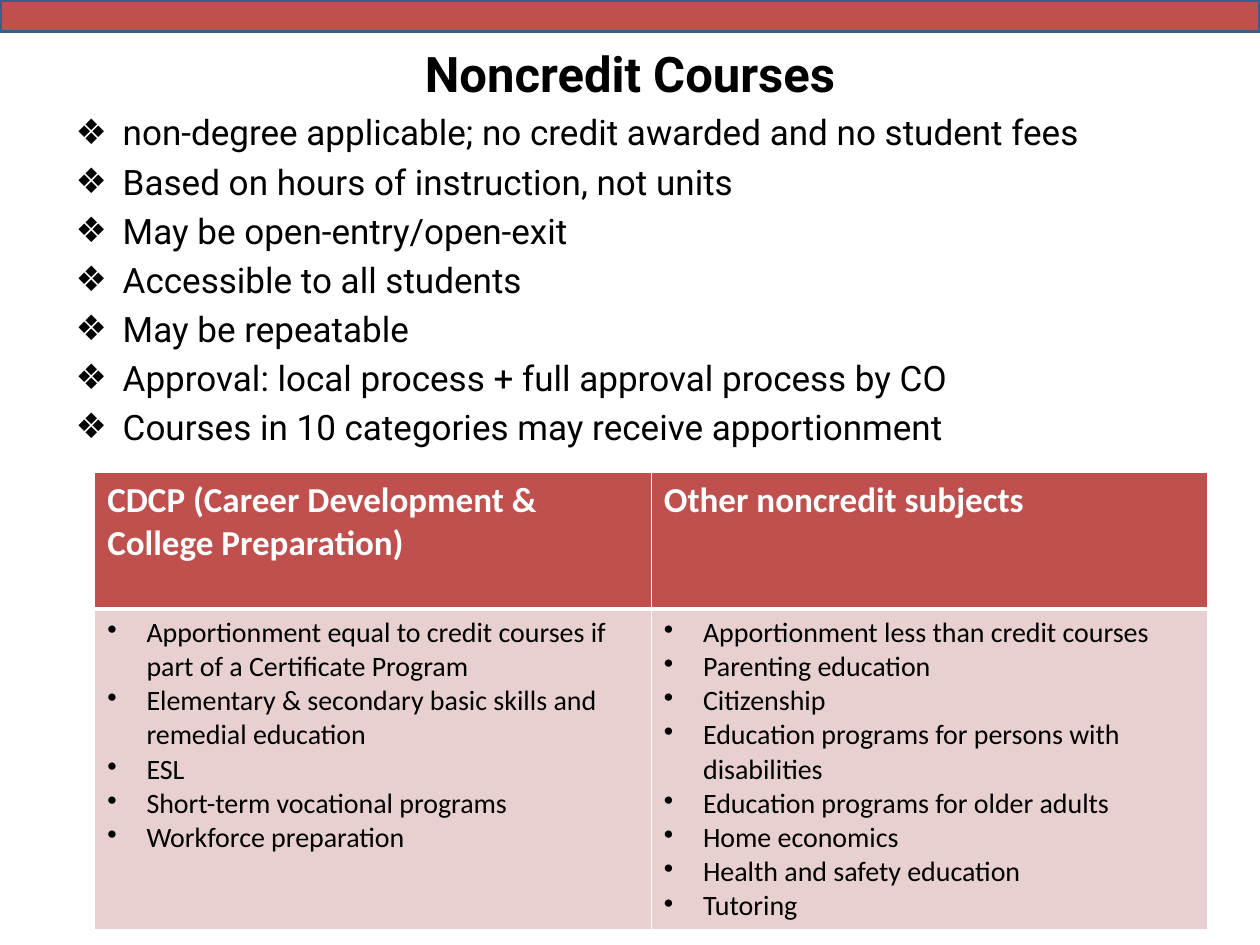
from lxml.etree import SubElement
from pptx import Presentation
from pptx.dml.color import RGBColor
from pptx.enum.shapes import MSO_SHAPE
from pptx.enum.text import MSO_ANCHOR, PP_ALIGN
from pptx.oxml.ns import qn
from pptx.util import Cm, Pt


def color(value):
    return RGBColor.from_string(value)


def write_paragraphs(frame, lines, style, hexcolor, bullet=None, indent=0):
    for index, line in enumerate(lines):
        paragraph = frame.paragraphs[0] if index == 0 else frame.add_paragraph()
        run = paragraph.add_run()
        run.text = line
        if bullet:
            properties = paragraph._p.get_or_add_pPr()
            properties.set("marL", str(indent))
            properties.set("indent", str(-indent))
            SubElement(properties, qn("a:buChar")).set("char", bullet)
        if index == 0:
            paragraph.space_before = Pt(0)
        for name, value in style.items():
            setattr(run.font, name, value)
        run.font.color.rgb = color(hexcolor)


RED, PINK, WHITE, BLACK = "C0504D", "E8D0D0", "FFFFFF", "000000"

presentation = Presentation()
presentation.slide_width = Cm(25.4)
presentation.slide_height = Cm(19.05)
slide = presentation.slides.add_slide(presentation.slide_layouts[1])

title = slide.shapes.title
body = slide.placeholders[1]
placements = [
    (title, {"left": Cm(1.27), "top": Cm(0.61), "width": Cm(22.86), "height": Cm(1.73)}),
    (body, {"left": Cm(1.27), "top": Cm(2.11), "width": Cm(22.86), "height": Cm(15.04)}),
]
for shape, placement in placements:
    for name, value in placement.items():
        setattr(shape, name, value)

title_style = {"name": "Roboto", "size": Pt(28), "bold": True}
write_paragraphs(title.text_frame, ["Noncredit Courses"], title_style, BLACK)
title.text_frame.paragraphs[0].alignment = PP_ALIGN.CENTER
title.text_frame.vertical_anchor = MSO_ANCHOR.MIDDLE

course_facts = [
    "non-degree applicable; no credit awarded and no student fees",
    "Based on hours of instruction, not units",
    "May be open-entry/open-exit",
    "Accessible to all students",
    "May be repeatable",
    "Approval: local process + full approval process by CO",
    "Courses in 10 categories may receive apportionment",
]
body_style = {"name": "Roboto", "size": Pt(20)}
write_paragraphs(body.text_frame, course_facts, body_style, BLACK, "❖", Cm(0.95))

banner = slide.shapes.add_shape(MSO_SHAPE.RECTANGLE, 0, 0, Cm(25.4), Cm(0.64))
banner.shadow.inherit = False
banner.fill.solid()
banner.fill.fore_color.rgb = color(RED)
banner.line.color.rgb = color("3A5F8C")
banner.line.width = Pt(2)

columns = [
    ("CDCP (Career Development & College Preparation)", [
        "Apportionment equal to credit courses if part of a Certificate Program",
        "Elementary & secondary basic skills and remedial education",
        "ESL",
        "Short-term vocational programs",
        "Workforce preparation",
    ]),
    ("Other noncredit subjects", [
        "Apportionment less than credit courses",
        "Parenting education",
        "Citizenship",
        "Education programs for persons with disabilities",
        "Education programs for older adults",
        "Home economics",
        "Health and safety education",
        "Tutoring",
    ]),
]
table = slide.shapes.add_table(2, 2, Cm(1.91), Cm(9.53), Cm(22.44), Cm(9.17)).table
for row, height in zip(table.rows, (2.75, 6.42)):
    row.height = Cm(height)

header_style = {"name": "Calibri", "size": Pt(20), "bold": True}
list_style = {"name": "Calibri", "size": Pt(16), "bold": False}
for column, (heading, subjects) in enumerate(columns):
    header, listing = table.cell(0, column), table.cell(1, column)
    write_paragraphs(header.text_frame, [heading], header_style, WHITE)
    write_paragraphs(listing.text_frame, subjects, list_style, BLACK, "•", Cm(0.79))
    for cell, fill, thick_side in ((header, RED, "lnB"), (listing, PINK, "lnT")):
        properties = cell._tc.get_or_add_tcPr()
        for side in ("lnL", "lnR", "lnT", "lnB"):
            border = SubElement(properties, qn(f"a:{side}"))
            border.set("w", str(Pt(3 if side == thick_side else 1)))
            solid = SubElement(border, qn("a:solidFill"))
            SubElement(solid, qn("a:srgbClr")).set("val", WHITE)
        cell.fill.solid()
        cell.fill.fore_color.rgb = color(fill)

presentation.save("out.pptx")
